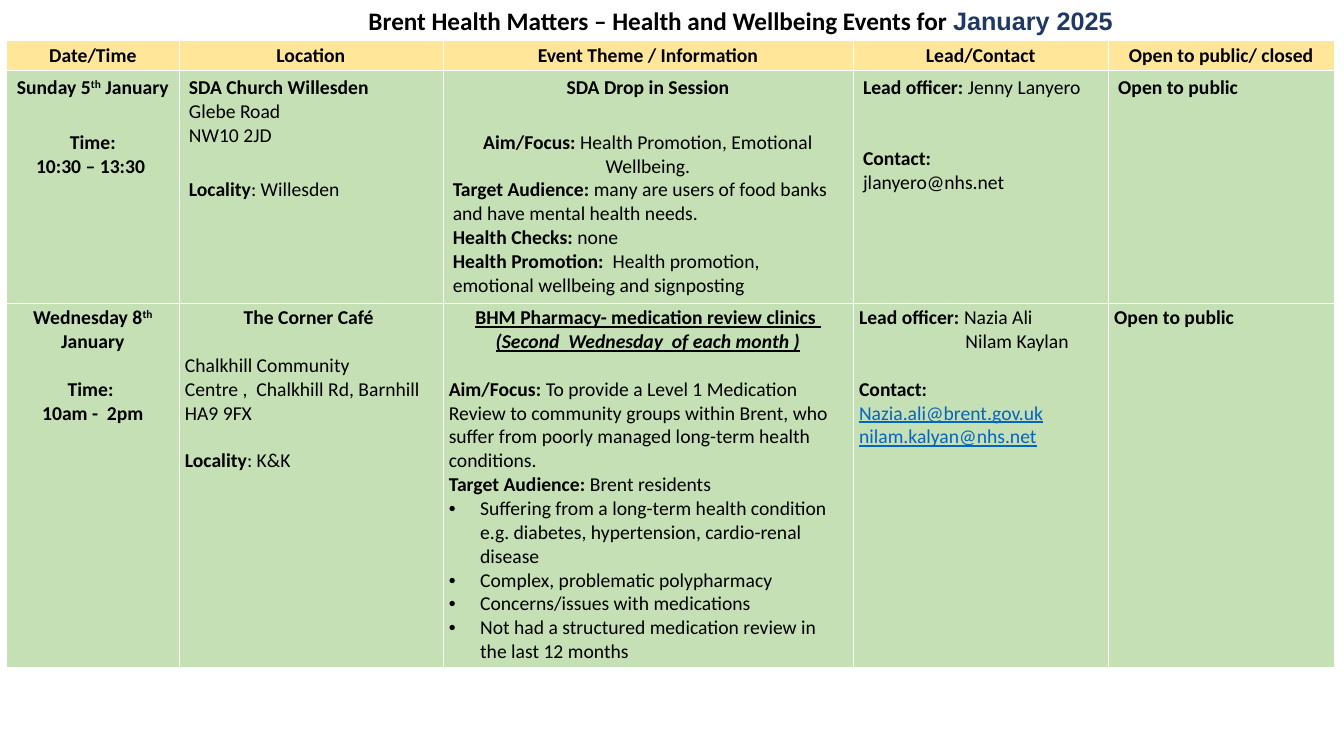
from lxml import etree
from pptx import Presentation
from pptx.dml.color import RGBColor
from pptx.enum.text import MSO_ANCHOR, MSO_AUTO_SIZE, PP_ALIGN
from pptx.oxml.ns import qn
from pptx.util import Cm, Pt

LEFT, CENTER = PP_ALIGN.LEFT, PP_ALIGN.CENTER
TOP, MIDDLE = MSO_ANCHOR.TOP, MSO_ANCHOR.MIDDLE
NO_AUTOFIT = MSO_AUTO_SIZE.NONE

BLACK, NAVY, LINK, WHITE = "000000", "203864", "0563C1", "FFFFFF"
HEADER_FILL, EVENT_FILL = "FFE699", "C5E0B4"
COLUMN_WIDTHS = (4.34, 6.65, 10.34, 6.43, 5.69)
ROW_HEIGHTS = (0.75, 5.85, 9.15)
TIGHT, WIDE = (0.15, 0.08), (0.25, 0.13)
BORDER_SIDES = ("a:lnL", "a:lnR", "a:lnT", "a:lnB")
LARGE_GAP, SMALL_GAP = 22, 17
BULLET_INDENT = 0.79


def colour(value):
    return RGBColor.from_string(value)


def text(words, **style):
    return words, style


def bold(words, **style):
    return text(words, bold=True, **style)


def line(*spans, align=LEFT, gap=0, indent=0, bullet=False):
    return {"spans": spans, "align": align, "gap": gap, "indent": indent, "bullet": bullet}


def centred(*spans, gap=0):
    return line(*spans, align=CENTER, gap=gap)


def bullet(words):
    return line(text(words), indent=BULLET_INDENT, bullet=True)


def add_span(para, words, size=14, font="Calibri", fill=BLACK, bold=False,
             italic=False, underline=False, raised=False):
    span = para.add_run()
    span.text = words
    span.font.size = Pt(size)
    span.font.name = font
    span.font.color.rgb = colour(fill)
    span.font.bold = bold
    span.font.italic = italic
    span.font.underline = underline
    if raised:
        span.font._element.set("baseline", "30000")


def write_line(para, content):
    para.alignment = content["align"]
    para.space_before = Pt(content["gap"])
    properties = para._p.get_or_add_pPr()
    if content["indent"]:
        properties.set("marL", str(Cm(content["indent"])))
    if content["bullet"]:
        properties.set("indent", str(-Cm(content["indent"])))
        etree.SubElement(properties, qn("a:buFont")).set("typeface", "Arial")
        etree.SubElement(properties, qn("a:buChar")).set("char", "•")
    for words, style in content["spans"]:
        add_span(para, words, **style)


def write_lines(frame, lines):
    for index, content in enumerate(lines):
        para = frame.add_paragraph() if index else frame.paragraphs[0]
        write_line(para, content)


def draw_borders(cell):
    properties = cell._tc.get_or_add_tcPr()
    for index, side in enumerate(BORDER_SIDES):
        border = etree.Element(qn(side), w=str(Pt(0.5)))
        fill = etree.SubElement(border, qn("a:solidFill"))
        etree.SubElement(fill, qn("a:srgbClr")).set("val", WHITE)
        properties.insert(index, border)


def fill_cell(cell, lines, fill, margins, anchor):
    cell.fill.solid()
    cell.fill.fore_color.rgb = colour(fill)
    cell.margin_left = cell.margin_right = Cm(margins[0])
    cell.margin_top = cell.margin_bottom = Cm(margins[1])
    cell.vertical_anchor = anchor
    write_lines(cell.text_frame, lines)
    draw_borders(cell)


def fill_row(table, row, contents, fill=EVENT_FILL, margins=TIGHT, anchor=TOP):
    for cell, lines in zip(table.rows[row].cells, contents):
        fill_cell(cell, lines, fill, margins, anchor)


def add_title(page, *spans):
    title = page.shapes.title
    title.left, title.top, title.width, title.height = Cm(1.73), Cm(0), Cm(33.87), Cm(1.55)
    frame = title.text_frame
    frame.word_wrap = True
    frame.auto_size = NO_AUTOFIT
    frame.vertical_anchor = TOP
    write_lines(frame, [centred(*spans)])


def add_event_table(page):
    frame = page.shapes.add_table(
        len(ROW_HEIGHTS), len(COLUMN_WIDTHS), Cm(0.17), Cm(1.02),
        Cm(sum(COLUMN_WIDTHS)), Cm(sum(ROW_HEIGHTS)))
    table = frame.table
    table.first_row = table.horz_banding = False
    for column, width in zip(table.columns, COLUMN_WIDTHS):
        column.width = Cm(width)
    for row, height in zip(table.rows, ROW_HEIGHTS):
        row.height = Cm(height)
    return table


def drop_in_session():
    return [
        [centred(bold("Sunday 5"), bold("th", raised=True), bold(" January")),
         centred(bold("Time:"), gap=LARGE_GAP),
         centred(bold("10:30 – 13:30 "))],
        [line(bold("SDA Church Willesden")),
         line(text("Glebe Road")),
         line(text("NW10 2JD")),
         line(bold("Locality"), text(": Willesden"), gap=LARGE_GAP)],
        [centred(bold("SDA Drop in Session")),
         centred(bold("Aim/Focus: "), text("Health Promotion, Emotional Wellbeing."),
                 gap=LARGE_GAP),
         line(bold("Target Audience: "),
              text("many are users of food banks and have mental health needs.")),
         line(bold("Health Checks: "), text("none")),
         line(bold("Health Promotion:  "),
              text("Health promotion, emotional wellbeing and signposting"))],
        [line(bold("Lead officer: "), text("Jenny Lanyero")),
         line(bold("Contact:"), gap=2 * SMALL_GAP),
         line(text("jlanyero@nhs.net"))],
        [line(bold("Open to public"))],
    ]


def pharmacy_clinic():
    return [
        [centred(bold("Wednesday 8"), bold("th", raised=True), bold(" January")),
         centred(bold("Time: "), gap=SMALL_GAP),
         centred(bold("10am -  2pm"))],
        [centred(bold("The Corner Café ")),
         line(text("Chalkhill Community"), gap=SMALL_GAP),
         line(text("Centre ,  Chalkhill Rd, Barnhill")),
         line(text("HA9 9FX")),
         line(bold("Locality"), text(": K&K"), gap=SMALL_GAP)],
        [centred(bold("BHM Pharmacy- medication review clinics ", underline=True)),
         centred(bold("(Second  Wednesday  of each month )", italic=True, underline=True)),
         line(bold("Aim/Focus: "),
              text("To provide a Level 1 Medication Review to community groups within Brent, "
                   "who suffer from poorly managed long-term health conditions."),
              gap=SMALL_GAP),
         line(bold("Target Audience: "), text("Brent residents")),
         bullet("Suffering from a long-term health condition e.g. diabetes, "
                "hypertension, cardio-renal disease"),
         bullet("Complex, problematic polypharmacy"),
         bullet("Concerns/issues with medications"),
         bullet("Not had a structured medication review in the last 12 months")],
        [line(bold("Lead officer: "), text("Nazia Ali")),
         line(text("Nilam Kaylan"), indent=2.68),
         line(bold("Contact:"), gap=SMALL_GAP),
         line(text("Nazia.ali@brent.gov.uk", fill=LINK, underline=True)),
         line(text("nilam.kalyan@nhs.net", fill=LINK, underline=True))],
        [line(bold("Open to public"))],
    ]


def main():
    deck = Presentation()
    deck.slide_width, deck.slide_height = Cm(33.87), Cm(19.05)
    page = deck.slides.add_slide(deck.slide_layouts.get_by_name("Title Only"))
    add_title(page,
              bold("Brent Health Matters – Health and Wellbeing Events for ", size=18),
              bold("January 2025", size=18, font="Arial", fill=NAVY))
    table = add_event_table(page)
    headings = ("Date/Time", "Location", "Event Theme / Information",
                "Lead/Contact", "Open to public/ closed")
    fill_row(table, 0, [[centred(bold(heading))] for heading in headings],
             fill=HEADER_FILL, anchor=MIDDLE)
    fill_row(table, 1, drop_in_session(), margins=WIDE)
    fill_row(table, 2, pharmacy_clinic())
    deck.save("out.pptx")


if __name__ == "__main__":
    main()
